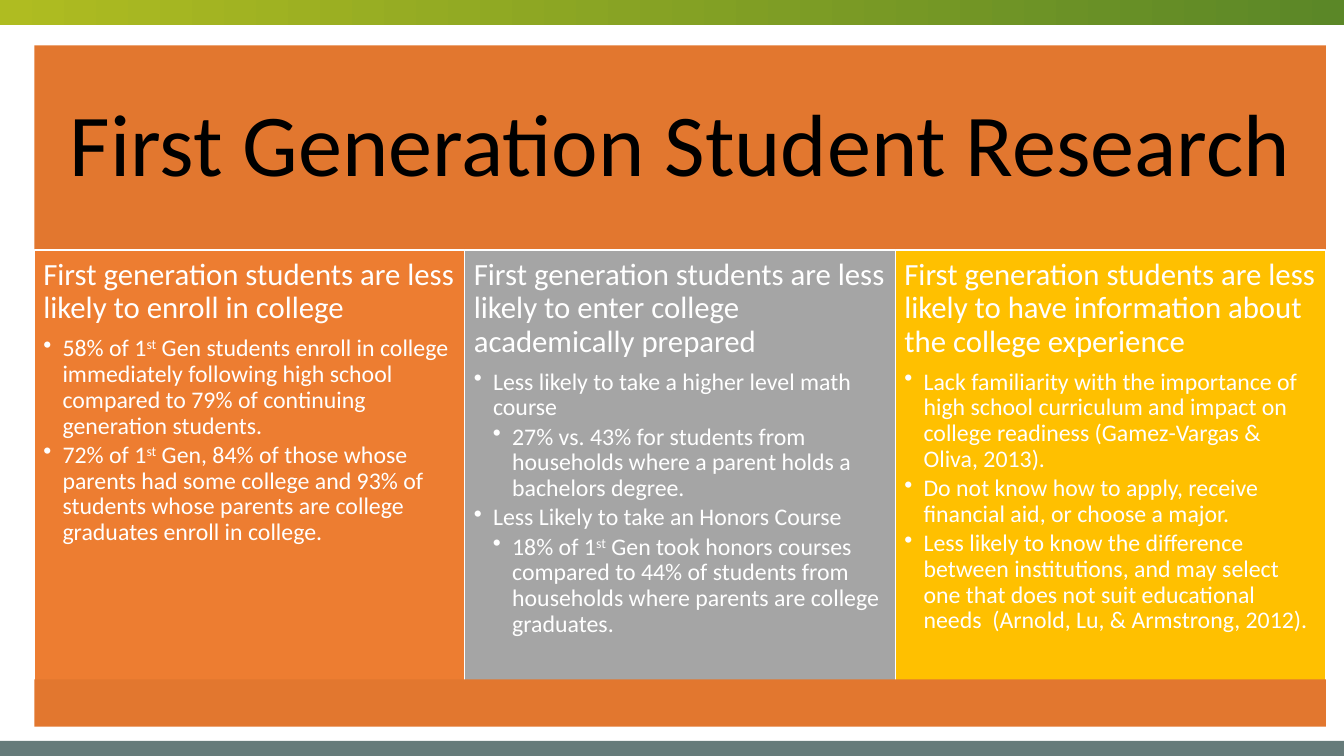
import lxml.etree
import pptx
import pptx.dml.color
import pptx.enum.shapes
import pptx.enum.text
import pptx.oxml.ns
import pptx.util
from pptx.util import Inches

COLORS = {
    "lime": "AFBC21", "green": "5B8727", "slate": "667B7A", "banner": "E2772F",
    "orange": "ED7D31", "gray": "A5A5A5", "gold": "FFC000",
    "white": "FFFFFF", "black": "000000",
}
FONT = "Calibri"
LEFT, WIDTH = 0.34, 12.81
COLUMN_TOP, COLUMN_SIZE = 2.48, 4.27
INDENT = 0.19

FINDINGS = [
    ("orange", "First generation students are less likely to enroll in college", [
        (1, "58% of 1^st^ Gen students enroll in college immediately following high school "
            "compared to 79% of continuing generation students."),
        (1, "72% of 1^st^ Gen, 84% of those whose parents had some college and 93% of "
            "students whose parents are college graduates enroll in college."),
    ]),
    ("gray", "First generation students are less likely to enter college academically prepared", [
        (1, "Less likely to take a higher level math course"),
        (2, "27% vs. 43% for students from households where a parent holds a bachelors degree."),
        (1, "Less Likely to take an Honors Course"),
        (2, "18% of 1^st^ Gen took honors courses compared to 44% of students from "
            "households where parents are college graduates."),
    ]),
    ("gold", "First generation students are less likely to have information about "
             "the college experience", [
        (1, "Lack familiarity with the importance of high school curriculum and impact on "
            "college readiness (Gamez-Vargas & Oliva, 2013)."),
        (1, "Do not know how to apply, receive financial aid, or choose a major."),
        (1, "Less likely to know the difference between institutions, and may select one "
            "that does not suit educational needs  (Arnold, Lu, & Armstrong, 2012)."),
    ]),
]


def rgb(name):
    return pptx.dml.color.RGBColor.from_string(COLORS[name])


def add_rect(s, x, y, w, h, fill, line=None):
    sp = s.shapes.add_shape(pptx.enum.shapes.MSO_SHAPE.RECTANGLE,
                            Inches(x), Inches(y), Inches(w), Inches(h))
    sp.shadow.inherit = False
    sp.fill.solid()
    sp.fill.fore_color.rgb = rgb(fill)
    if line:
        sp.line.color.rgb = rgb(line)
        sp.line.width = pptx.util.Pt(1)
    else:
        sp.line.fill.background()
    return sp


def add_gradient_bar(s, x, y, w, h, start, end):
    sp = add_rect(s, x, y, w, h, start)
    sp.fill.gradient()
    sp.fill.gradient_angle = 0
    for stop, name, position in zip(sp.fill.gradient_stops, (start, end), (0, 1)):
        stop.color.rgb = rgb(name)
        stop.position = position


def prepare_frame(sp, inset, anchor):
    tf = sp.text_frame
    tf.word_wrap = True
    tf.vertical_anchor = anchor
    tf.margin_left = tf.margin_right = tf.margin_top = tf.margin_bottom = Inches(inset)
    return tf


def write_paragraph(p, text, size, color, after, align=pptx.enum.text.PP_ALIGN.LEFT):
    p.alignment = align
    p.line_spacing = 0.9
    p.space_after = pptx.util.Pt(after)
    for i, part in enumerate(text.split("^")):
        r = p.add_run()
        r.text = part
        r.font.name = FONT
        r.font.size = pptx.util.Pt(size)
        r.font.color.rgb = rgb(color)
        if i % 2:
            r._r.get_or_add_rPr().set("baseline", "30000")


def add_bullet(p, level):
    p.level = level
    pPr = p._p.get_or_add_pPr()
    pPr.set("marL", str(Inches(INDENT * level)))
    pPr.set("indent", str(-Inches(INDENT)))
    bullet = lxml.etree.SubElement(pPr, pptx.oxml.ns.qn("a:buChar"))
    bullet.set("char", "•")


def add_title_banner(s, text):
    sp = add_rect(s, LEFT, 0.45, WIDTH, 2.03, "banner")
    tf = prepare_frame(sp, 0.26, pptx.enum.text.MSO_ANCHOR.MIDDLE)
    write_paragraph(tf.paragraphs[0], text, 63, "black", 0, pptx.enum.text.PP_ALIGN.CENTER)


def add_finding(s, x, fill, heading, bullets):
    sp = add_rect(s, x, COLUMN_TOP, COLUMN_SIZE, COLUMN_SIZE, fill, "white")
    tf = prepare_frame(sp, 0.09, pptx.enum.text.MSO_ANCHOR.TOP)
    write_paragraph(tf.paragraphs[0], heading, 22, "white", 7.7)
    for level, text in bullets:
        p = tf.add_paragraph()
        write_paragraph(p, text, 17, "white", 2.55)
        add_bullet(p, level)


def main():
    prs = pptx.Presentation()
    prs.slide_width, prs.slide_height = Inches(13.33), Inches(7.5)
    s = prs.slides.add_slide(prs.slide_layouts[6])
    add_gradient_bar(s, 0, -0.01, 13.33, 0.26, "lime", "green")
    add_rect(s, 0, 7.35, 13.33, 0.16, "slate")
    add_title_banner(s, "First Generation Student Research")
    for i, (fill, heading, bullets) in enumerate(FINDINGS):
        add_finding(s, LEFT + i * COLUMN_SIZE, fill, heading, bullets)
    add_rect(s, LEFT, 6.74, WIDTH, 0.47, "banner")
    prs.save("out.pptx")


if __name__ == "__main__":
    main()
